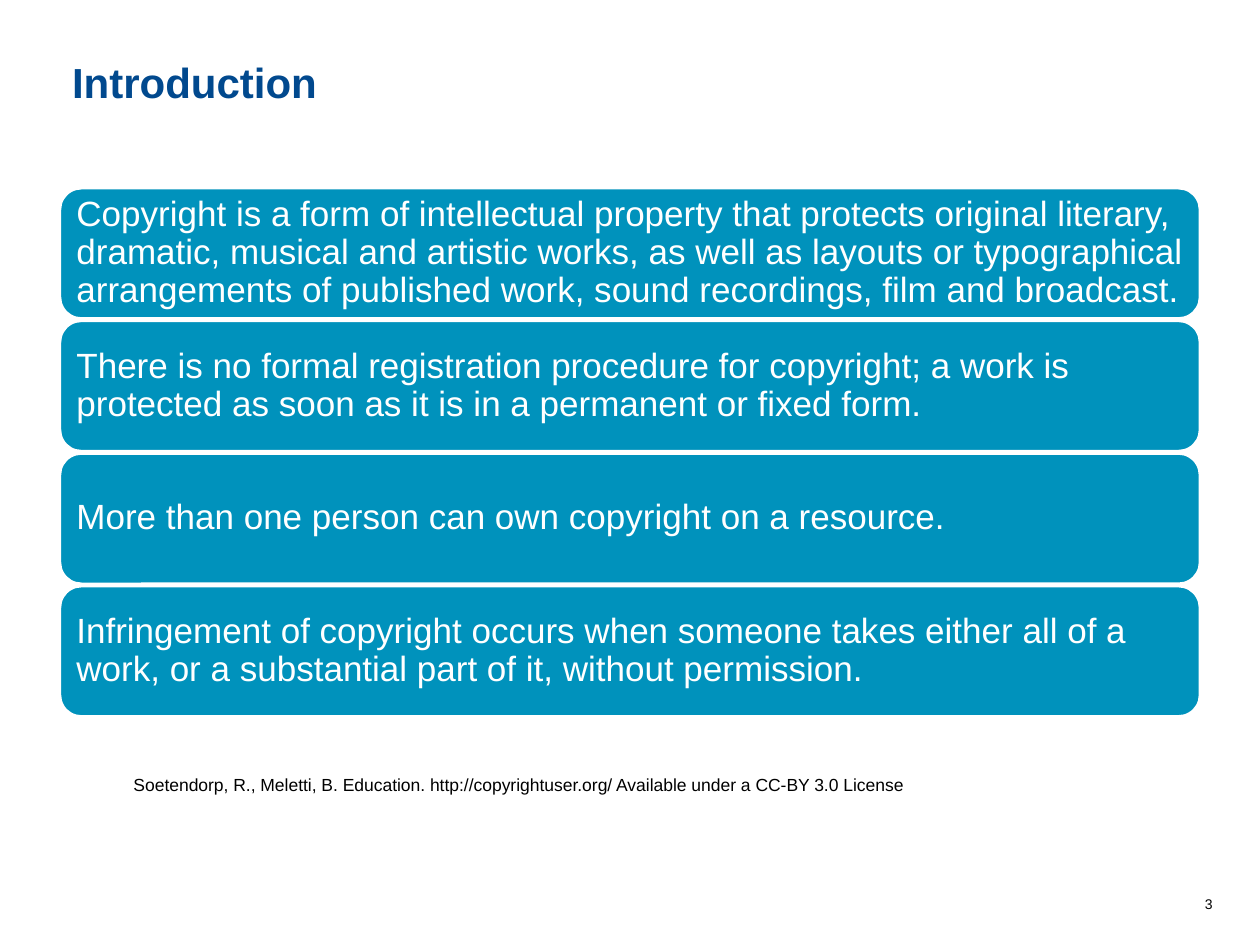
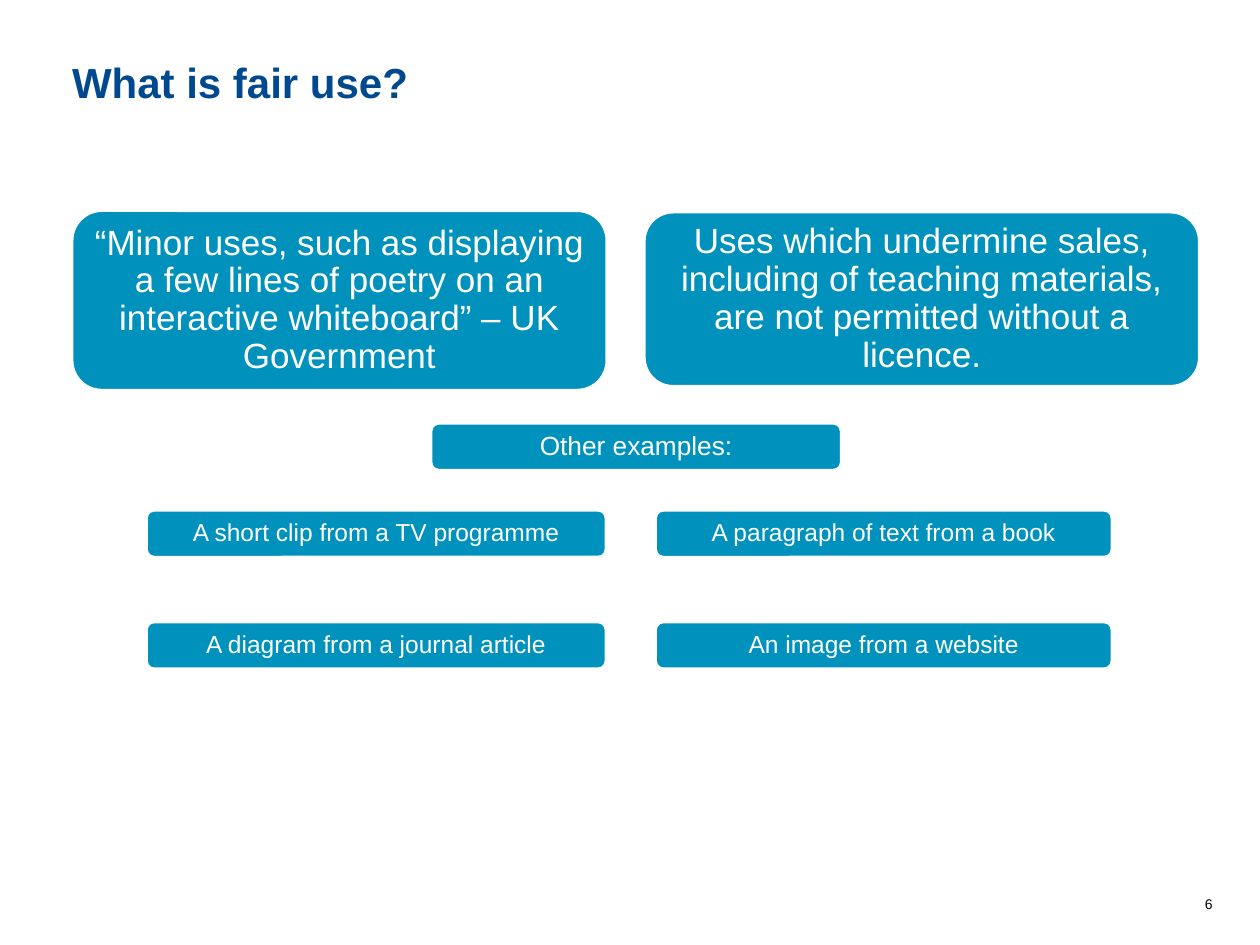
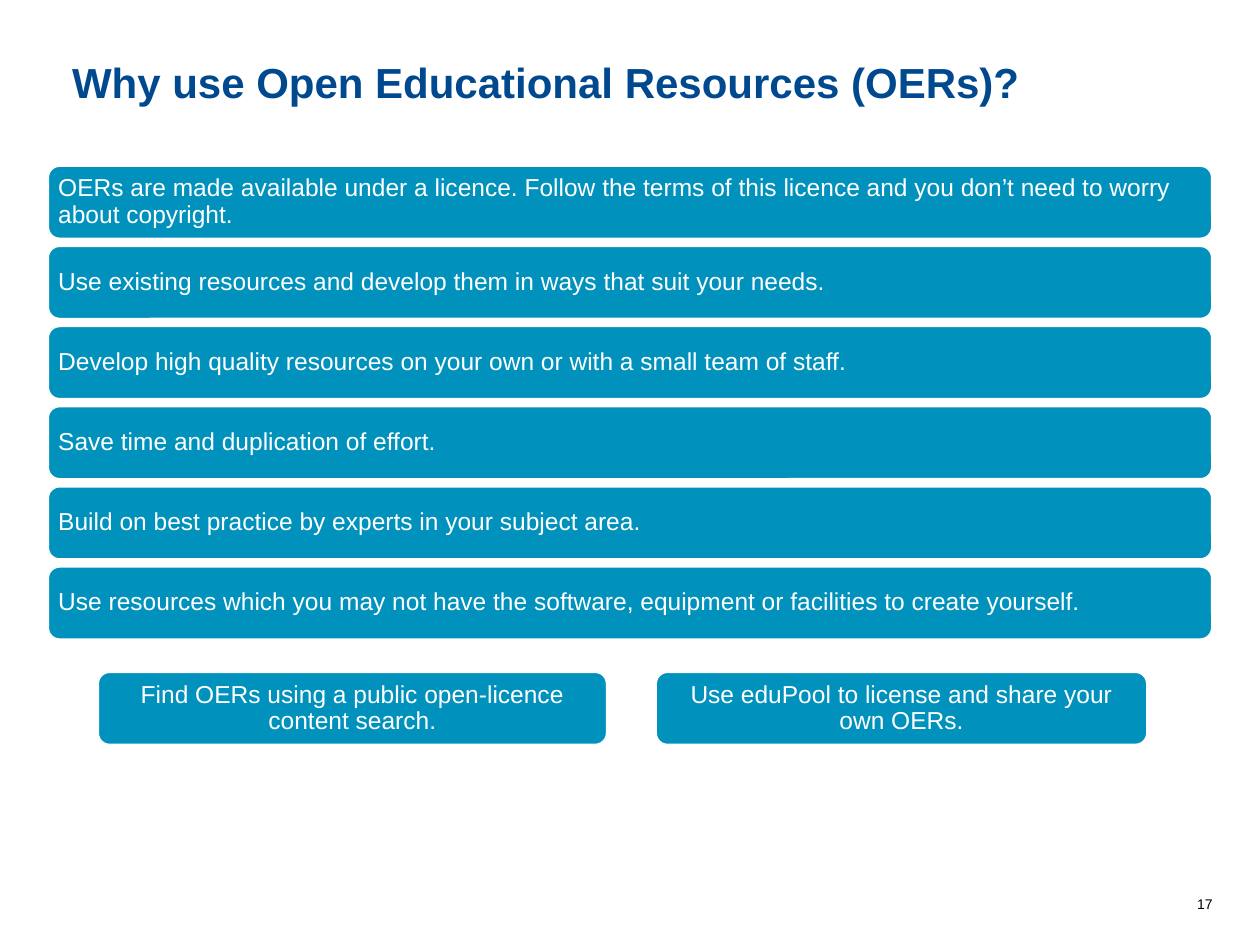
from collections import namedtuple

from pptx import Presentation
from pptx.dml.color import RGBColor
from pptx.enum import shapes, text
from pptx.util import Pt

Box = namedtuple("Box", "left top width height")

FONT = "Arial"
NAVY, TEAL, WHITE, BLACK = "01498E", "0092BC", "FFFFFF", "000000"
PAGE = Box(0, 0, 720, 540)
LEFT, CENTER, RIGHT = text.PP_ALIGN.LEFT, text.PP_ALIGN.CENTER, text.PP_ALIGN.RIGHT


def color(value):
    return RGBColor.from_string(value)


def points(box):
    return [Pt(length) for length in box]


def write(frame, wording, size, ink, align=LEFT, bold=False):
    frame.word_wrap = True
    paragraph = frame.paragraphs[0]
    paragraph.alignment = align
    run = paragraph.add_run()
    run.text = wording
    run.font.name = FONT
    run.font.size = Pt(size)
    run.font.bold = bold
    run.font.color.rgb = color(ink)
    return paragraph


def add_label(slide, box, wording, size, align=LEFT):
    label = slide.shapes.add_textbox(*points(box))
    write(label.text_frame, wording, size, BLACK, align)


def add_titled_slide(deck, heading, number):
    slide = deck.slides.add_slide(deck.slide_layouts[5])
    title = slide.shapes.title
    title.left, title.top, title.width, title.height = points(Box(34, 28.8, 652, 36))
    frame = title.text_frame
    frame.auto_size = text.MSO_AUTO_SIZE.NONE
    frame.vertical_anchor = text.MSO_ANCHOR.BOTTOM
    write(frame, heading, 24, NAVY, bold=True)
    add_label(slide, Box(388, 508.3, 312, 17), number, 8, RIGHT)
    return slide


def add_panel(slide, box, wording, size, align=LEFT, vertical_inset=0.3):
    panel = slide.shapes.add_shape(shapes.MSO_SHAPE.ROUNDED_RECTANGLE, *points(box))
    panel.shadow.inherit = False
    panel.fill.solid()
    panel.fill.fore_color.rgb = color(TEAL)
    panel.line.color.rgb = color(WHITE)
    panel.line.width = Pt(2)
    frame = panel.text_frame
    frame.vertical_anchor = text.MSO_ANCHOR.MIDDLE
    frame.margin_left = frame.margin_right = Pt(0.3 * size)
    frame.margin_top = frame.margin_bottom = Pt(vertical_inset * size)
    write(frame, wording, size, WHITE, align).line_spacing = 0.9


def add_stack(slide, box, statements, gap, size):
    height = (box.height - gap * (len(statements) - 1)) / len(statements)
    for row, statement in enumerate(statements):
        top = box.top + row * (height + gap)
        add_panel(slide, Box(box.left, top, box.width, height), statement, size)


def add_examples(slide, box, heading, examples):
    height = 27.2
    add_panel(slide, Box(box.left + 162.6, box.top, 234.8, height), heading, 15, CENTER, 0.15)
    columns = (0, 263), (290.9, 261.2)
    for row, pair in enumerate(examples):
        top = box.top + box.height - height - (len(examples) - 1 - row) * 63.8
        for (offset, width), example in zip(columns, pair):
            add_panel(slide, Box(box.left + offset, top, width, height), example, 14, CENTER, 0.15)


def build_introduction(deck, box):
    slide = add_titled_slide(deck, "Introduction", "3")
    add_stack(slide, Box(box.left + 34, box.top + 107.3, 652, 302.4), [
        "Copyright is a form of intellectual property that protects original literary, dramatic, "
        "musical and artistic works, as well as layouts or typographical arrangements of published "
        "work, sound recordings, film and broadcast.",
        "There is no formal registration procedure for copyright; a work is protected as soon as "
        "it is in a permanent or fixed form.",
        "More than one person can own copyright on a resource.",
        "Infringement of copyright occurs when someone takes either all of a work, or a "
        "substantial part of it, without permission.",
    ], 0.8, 20)
    add_label(slide, Box(box.left + 69.2, box.top + 438.5, 517.7, 19.4),
              "Soetendorp, R., Meletti, B. Education. http://copyrightuser.org/ "
              "Available under a CC-BY 3.0 License", 10)


def build_fair_use(deck, box):
    slide = add_titled_slide(deck, "What is fair use?", "6")
    add_panel(slide, Box(box.left + 41, box.top + 120.2, 306, 103),
              "“Minor uses, such as displaying a few lines of poetry on an interactive "
              "whiteboard” – UK Government", 20, CENTER, 0.15)
    add_panel(slide, Box(box.left + 368, box.top + 121, 317.6, 100),
              "Uses which undermine sales, including of teaching materials, are not permitted "
              "without a licence.", 20, CENTER, 0.15)
    add_examples(slide, Box(box.left + 83.5, box.top + 241.7, 552.1, 140.7), "Other examples:", [
        ("A short clip from a TV programme", "A paragraph of text from a book"),
        ("A diagram from a journal article", "An image from a website"),
    ])


def build_open_resources(deck, box):
    slide = add_titled_slide(deck, "Why use Open Educational Resources (OERs)?", "17")
    add_stack(slide, Box(box.left + 27, box.top + 94.4, 666, 271.4), [
        "OERs are made available under a licence. Follow the terms of this licence and you don’t "
        "need to worry about copyright.",
        "Use existing resources and develop them in ways that suit your needs.",
        "Develop high quality resources on your own or with a small team of staff.",
        "Save time and duplication of effort.",
        "Build on best practice by experts in your subject area.",
        "Use resources which you may not have the software, equipment or facilities to create "
        "yourself.",
    ], 3.4, 14)
    actions = [
        (55.6, 291.6, "Find OERs using a public open-licence content search."),
        (374.4, 281.5, "Use eduPool to license and share your own OERs."),
    ]
    for offset, width, action in actions:
        add_panel(slide, Box(box.left + offset, box.top + 383.6, width, 42.4), action, 14, CENTER)


def main():
    deck = Presentation()
    deck.slide_width, deck.slide_height = Pt(PAGE.width), Pt(PAGE.height)
    for build in (build_introduction, build_fair_use, build_open_resources):
        build(deck, PAGE)
    deck.save("out.pptx")


if __name__ == "__main__":
    main()
